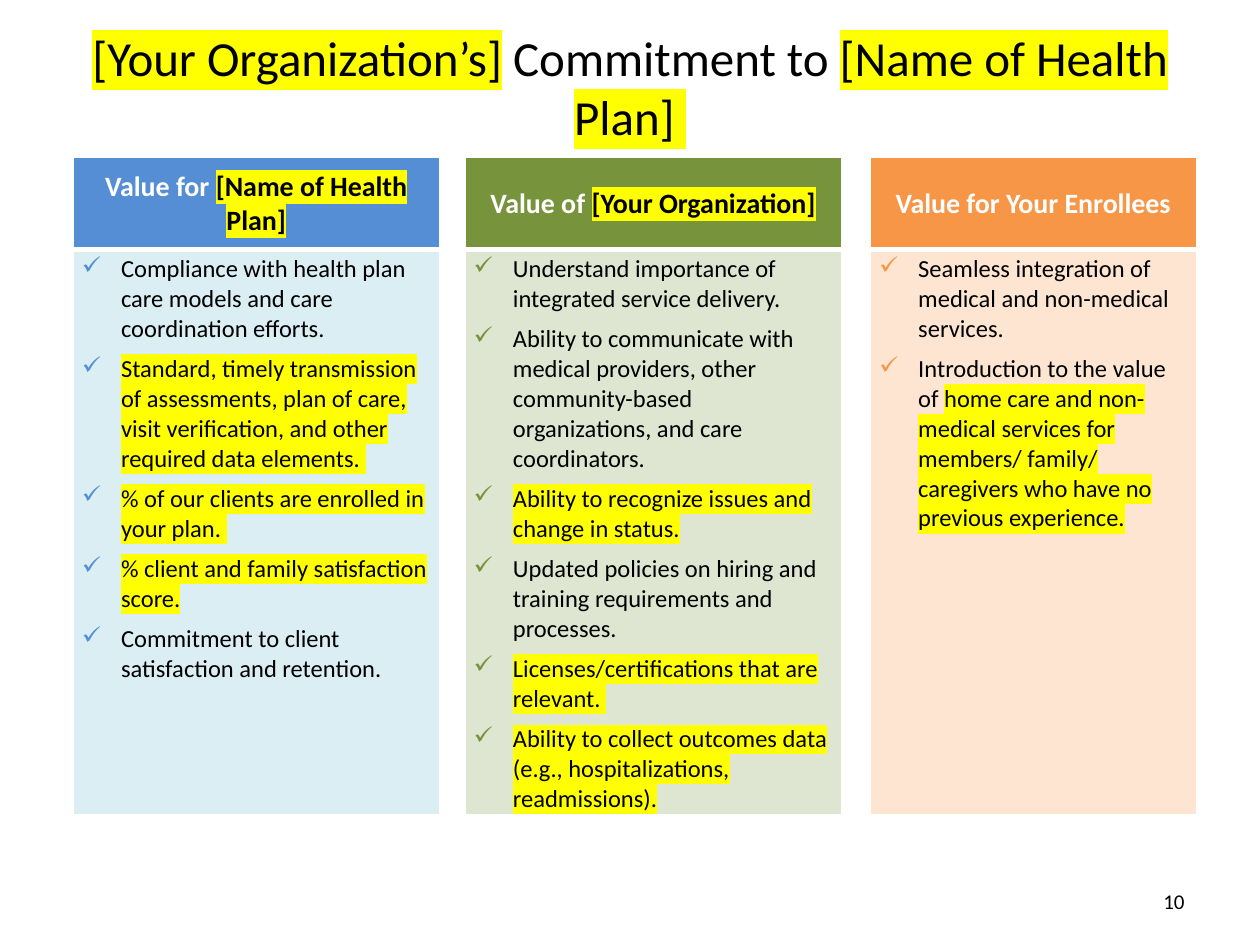
from lxml.etree import SubElement
from pptx import Presentation
from pptx.dml.color import RGBColor
from pptx.enum.text import MSO_ANCHOR, PP_ALIGN
from pptx.oxml.ns import qn
from pptx.util import Cm, Pt

BLACK, WHITE, YELLOW = "000000", "FFFFFF", "FFFF00"
BLUE, GREEN, ORANGE = "558ED5", "77933C", "F79646"


def rgb(value):
    return RGBColor.from_string(value)


def marked(text):
    """A paragraph that is highlighted as a whole."""
    return [(text, True)]


def plain(text):
    return [(text, False)]


class SlideBuilder:
    font = "Calibri"
    hanging = Cm(0.79)
    cell_margins = Cm(0.18), Cm(0.1)

    def __init__(self, slide):
        self.slide = slide

    def runs(self, paragraph, segments, size, color=BLACK, bold=False):
        """Add (text, highlighted) segments; highlighted text is always black."""
        for text, highlighted in segments:
            run = paragraph.add_run()
            run.text = text
            run.font.size = Pt(size)
            run.font.bold = bold
            run.font.color.rgb = rgb(BLACK if highlighted else color)
            if highlighted:
                highlight = SubElement(run.font._element, qn("a:highlight"))
                SubElement(highlight, qn("a:srgbClr"), val=YELLOW)
            run.font.name = self.font

    def text(self, left, top, width, height, segments, size, align):
        frame = self.slide.shapes.add_textbox(
            Cm(left), Cm(top), Cm(width), Cm(height)).text_frame
        frame.word_wrap = True
        frame.vertical_anchor = MSO_ANCHOR.MIDDLE
        frame.paragraphs[0].alignment = align
        self.runs(frame.paragraphs[0], segments, size)

    def table(self, left, top, widths, heights):
        """Add an unstyled table with white rules, thicker below the first row."""
        table = self.slide.shapes.add_table(
            len(heights), len(widths), Cm(left), Cm(top),
            Cm(sum(widths)), Cm(sum(heights))).table
        table.first_row = table.horz_banding = False
        for column, width in zip(table.columns, widths):
            column.width = Cm(width)
        for index, (row, height) in enumerate(zip(table.rows, heights)):
            row.height = Cm(height)
            for cell in row.cells:
                cell.margin_left = cell.margin_right = self.cell_margins[0]
                cell.margin_top = cell.margin_bottom = self.cell_margins[1]
                cell.fill.background()
                self.borders(cell, top=3 if index else 1, bottom=1 if index else 3)
        return table

    def borders(self, cell, top, bottom):
        properties = cell._tc.get_or_add_tcPr()
        sides = {"a:lnL": 1, "a:lnR": 1, "a:lnT": top, "a:lnB": bottom}
        for position, (side, points) in enumerate(sides.items()):
            line = SubElement(properties, qn(side), w=str(Pt(points)))
            fill = SubElement(line, qn("a:solidFill"))
            SubElement(fill, qn("a:srgbClr"), val=WHITE)
            properties.insert(position, line)

    def fill(self, cell, color, opacity=100):
        cell.fill.solid()
        cell.fill.fore_color.rgb = rgb(color)
        if opacity < 100:
            color_element = cell._tc.tcPr.find(qn("a:solidFill")).find(qn("a:srgbClr"))
            SubElement(color_element, qn("a:alpha"), val=str(opacity * 1000))

    def heading(self, cell, segments, color):
        self.fill(cell, color)
        cell.vertical_anchor = MSO_ANCHOR.MIDDLE
        paragraph = cell.text_frame.paragraphs[0]
        paragraph.alignment = PP_ALIGN.CENTER
        self.runs(paragraph, segments, 16, WHITE, bold=True)

    def checklist(self, cell, items, color):
        frame = cell.text_frame
        for index, segments in enumerate(items):
            paragraph = frame.add_paragraph() if index else frame.paragraphs[0]
            paragraph.space_after = Pt(6)
            properties = paragraph._p.get_or_add_pPr()
            properties.set("marL", str(self.hanging))
            properties.set("indent", str(-self.hanging))
            bullet_color = SubElement(properties, qn("a:buClr"))
            SubElement(bullet_color, qn("a:srgbClr"), val=color)
            SubElement(properties, qn("a:buChar"), char="✓")
            self.runs(paragraph, segments, 14)


# heading, accent colour, body fill with its opacity, checklist
VALUES = [
    ([("Value for ", False), ("[Name of Health Plan]", True)], BLUE, ("DBEEF4", 100), [
        plain("Compliance with health plan care models and care coordination efforts."),
        marked("Standard, timely transmission of assessments, plan of care, "
               "visit verification, and other required data elements. "),
        marked("% of our clients are enrolled in your plan. "),
        marked("% client and family satisfaction score."),
        plain("Commitment to client satisfaction and retention."),
    ]),
    ([("Value of ", False), ("[Your Organization]", True)], GREEN, (GREEN, 24), [
        plain("Understand importance of integrated service delivery."),
        plain("Ability to communicate with medical providers, other "
              "community-based organizations, and care coordinators."),
        marked("Ability to recognize issues and change in status."),
        plain("Updated policies on hiring and training requirements and processes."),
        marked("Licenses/certifications that are relevant. "),
        marked("Ability to collect outcomes data (e.g., hospitalizations, readmissions)."),
    ]),
    (plain("Value for Your Enrollees"), ORANGE, (ORANGE, 24), [
        plain("Seamless integration of medical and non-medical services."),
        [("Introduction to the value of ", False),
         ("home care and non-medical services for members/ family/ "
          "caregivers who have no previous experience.", True)],
    ]),
]


def main():
    deck = Presentation()
    deck.slide_width, deck.slide_height = Cm(25.4), Cm(19.05)
    builder = SlideBuilder(deck.slides.add_slide(deck.slide_layouts[6]))

    title = [("[Your Organization’s]", True), (" Commitment to ", False),
             ("[Name of Health Plan] ", True)]
    builder.text(1.27, 0.76, 22.86, 1.98, title, 28, PP_ALIGN.CENTER)
    builder.text(18.21, 17.65, 5.92, 1.02, plain("10"), 12, PP_ALIGN.RIGHT)

    # Narrow empty columns separate the three value columns.
    table = builder.table(1.47, 3.18, [7.39, 0.51, 7.59, 0.58, 6.58], [1.85, 11.4])
    for index, (heading, accent, body_fill, items) in enumerate(VALUES):
        builder.heading(table.cell(0, 2 * index), heading, accent)
        body = table.cell(1, 2 * index)
        builder.fill(body, *body_fill)
        builder.checklist(body, items, accent)

    deck.save("out.pptx")


if __name__ == "__main__":
    main()
